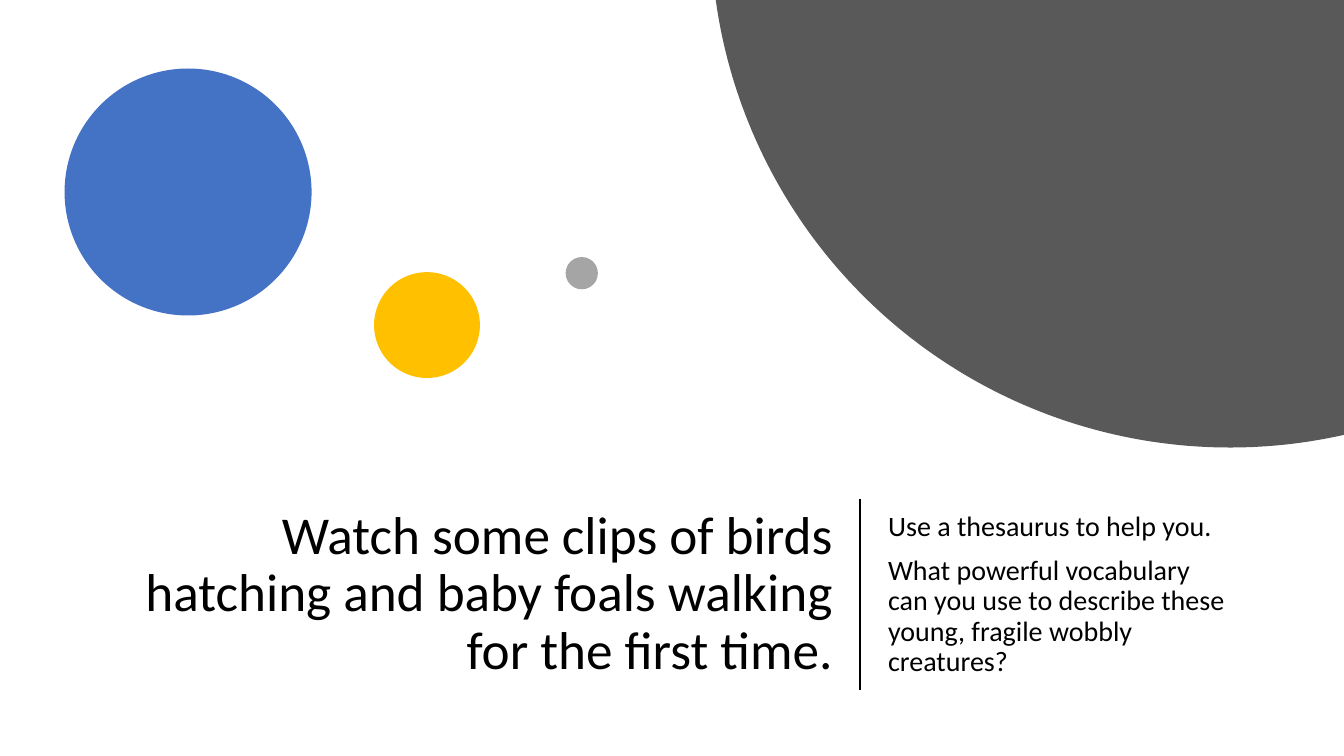
"""Build a slide of coloured circles above a title and a prompt."""
from math import acos, asin, cos, sin

from pptx import Presentation
from pptx.dml.color import RGBColor
from pptx.enum.shapes import MSO_CONNECTOR, MSO_SHAPE
from pptx.enum.text import MSO_ANCHOR, PP_ALIGN
from pptx.oxml.ns import qn
from pptx.util import Inches, Pt

LEFT, RIGHT = PP_ALIGN.LEFT, PP_ALIGN.RIGHT
MIDDLE = MSO_ANCHOR.MIDDLE
OVAL = MSO_SHAPE.OVAL
STRAIGHT = MSO_CONNECTOR.STRAIGHT

WIDTH, HEIGHT = 13.33, 7.5
BLACK = "000000"
TEXT_TOP, TEXT_HEIGHT, DIVIDER_X = 4.95, 1.9, 8.53

TEXTS = [
    {"left": 0.92, "width": 7.44, "size": 38, "align": RIGHT, "before": 0,
     "lines": ["Watch some clips of birds hatching and baby foals walking "
               "for the first time."]},
    {"left": 8.71, "width": 3.56, "size": 20, "align": LEFT, "before": 10,
     "lines": ["Use a thesaurus to help you.",
               "What powerful vocabulary can you use to describe these young, "
               "fragile wobbly creatures?"]},
]
CIRCLES = [
    (0.64, 0.68, 2.45, "4472C4"),
    (3.71, 2.7, 1.05, "FFC000"),
    (5.61, 2.55, 0.32, "A5A5A5"),
]
BIG_CIRCLE = {"x": 12.2, "y": -0.71, "radius": 5.15, "color": "595959"}
ARC_STEPS = 120


def rgb(color):
    return RGBColor.from_string(color)


def paint(sp, color):
    sp.shadow.inherit = False
    sp.fill.solid()
    sp.fill.fore_color.rgb = rgb(color)
    sp.line.fill.background()


def add_text(s, left, width, size, align, before, lines):
    box = s.shapes.add_textbox(Inches(left), Inches(TEXT_TOP),
                               Inches(width), Inches(TEXT_HEIGHT))
    tf = box.text_frame
    tf.word_wrap = True
    tf.vertical_anchor = MIDDLE
    tf.text = "\n".join(lines)
    formats = {"alignment": align, "line_spacing": 0.9, "space_before": Pt(before)}
    for p in tf.paragraphs:
        for name, value in formats.items():
            setattr(p, name, value)
        font = p.runs[0].font
        for name, value in {"name": "Calibri", "size": Pt(size)}.items():
            setattr(font, name, value)
        font.color.rgb = rgb(BLACK)


def add_cropped_circle(s, x, y, radius, color):
    start = acos((WIDTH - x) / radius)
    end = acos(-1) - asin(-y / radius)
    angles = [start + (end - start) * i / ARC_STEPS for i in range(ARC_STEPS + 1)]
    arc = [(Inches(x + radius * cos(a)), Inches(y + radius * sin(a))) for a in angles]
    builder = s.shapes.build_freeform(Inches(WIDTH), 0)
    builder.add_line_segments(arc, close=True)
    paint(builder.convert_to_shape(), color)


def add_divider(s):
    line = s.shapes.add_connector(STRAIGHT, Inches(DIVIDER_X), Inches(TEXT_TOP),
                                  Inches(DIVIDER_X), Inches(TEXT_TOP + TEXT_HEIGHT))
    line.line.color.rgb = rgb(BLACK)
    line.line.width = Pt(1.5)
    sp_pr = line.element.spPr
    sp_pr.append(sp_pr.makeelement(qn("a:effectLst"), {}))


def main():
    prs = Presentation()
    prs.slide_width, prs.slide_height = Inches(WIDTH), Inches(HEIGHT)
    s = prs.slides.add_slide(prs.slide_layouts[6])
    for text in TEXTS:
        add_text(s, **text)
    for left, top, size, color in CIRCLES:
        sp = s.shapes.add_shape(OVAL, Inches(left), Inches(top),
                                Inches(size), Inches(size))
        paint(sp, color)
    add_cropped_circle(s, **BIG_CIRCLE)
    add_divider(s)
    prs.save("out.pptx")


if __name__ == "__main__":
    main()
